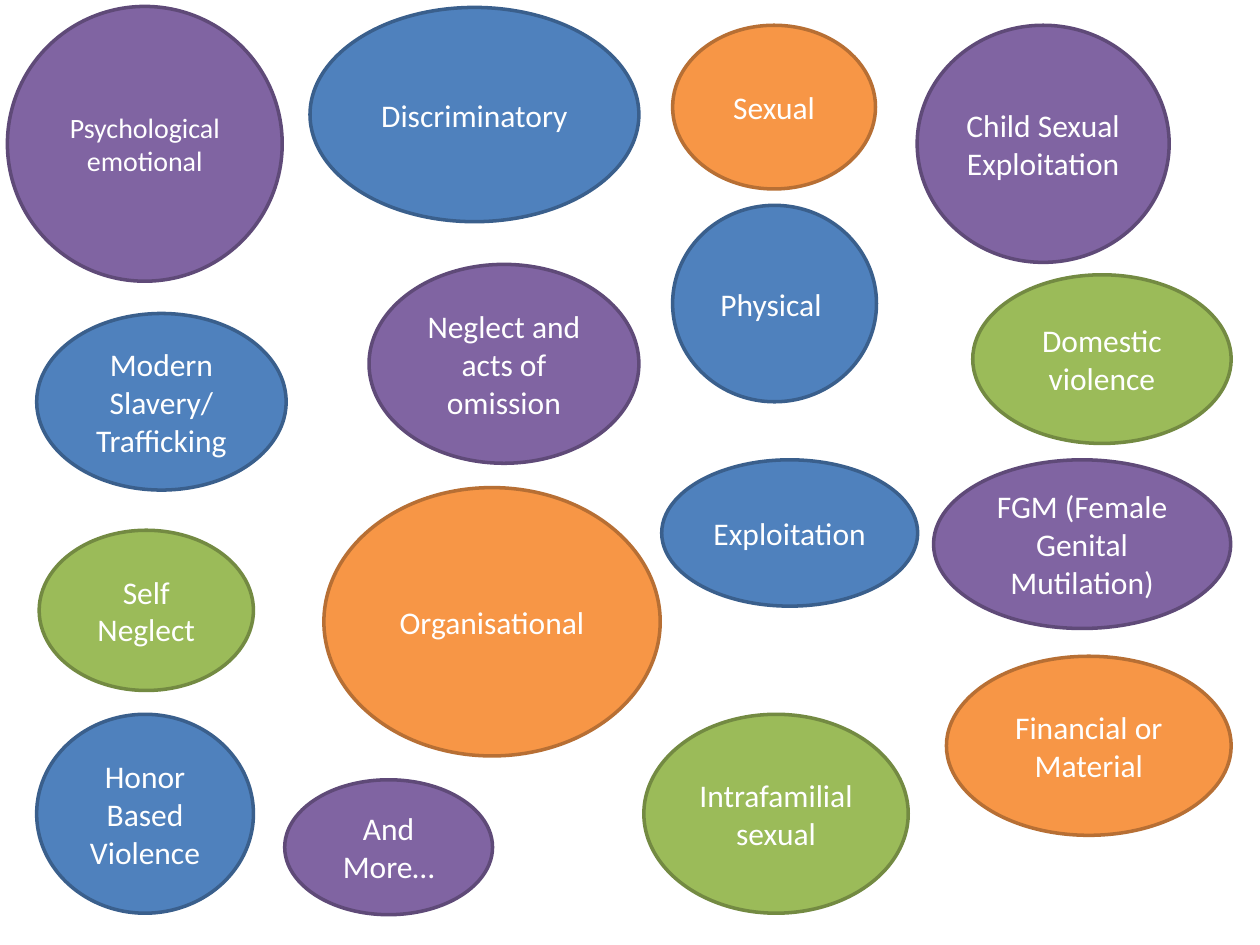
import pptx
import pptx.dml.color
import pptx.enum.shapes
import pptx.enum.text
import pptx.util

Cm = pptx.util.Cm
Pt = pptx.util.Pt
RGB = pptx.dml.color.RGBColor.from_string

THEME = {
    "font": "Calibri",
    "text": "FFFFFF",
    "size": 18,
    "small_size": 16,
    "line_width": 2,
    # name: (fill, outline)
    "purple": ("8064A2", "5F4A78"),
    "green": ("9BBB59", "738A42"),
    "orange": ("F79646", "B76F34"),
    "blue": ("4F81BD", "3A5F8C"),
}

# Label, colour, (left, top, width, height) in cm, text size; back to front
ABUSE_TYPES = [
    ("FGM (Female Genital Mutilation)", "purple", (18.82, 9.27, 5.99, 3.4), "size"),
    ("Neglect and acts of omission", "purple", (7.44, 5.33, 5.44, 4.01), "size"),
    ("Domestic violence", "green", (19.61, 5.54, 5.21, 3.4), "size"),
    ("Financial or Material", "orange", (19.08, 13.23, 5.74, 3.61), "size"),
    ("Sexual", "orange", (13.56, 0.51, 4.09, 3.3), "size"),
    ("Child Sexual \nExploitation", "purple", (18.49, 0.51, 5.08, 4.78), "size"),
    ("Exploitation", "blue", (13.34, 9.27, 5.16, 2.95), "size"),
    ("Modern Slavery/ Trafficking", "blue", (0.74, 6.32, 5.03, 3.56), "size"),
    ("Physical ", "blue", (13.56, 4.14, 4.11, 3.96), "size"),
    ("Discriminatory", "blue", (6.25, 0.15, 6.63, 4.32), "size"),
    ("Psychological\nemotional", "purple", (0.15, 0.13, 5.54, 5.54), "small_size"),
    ("Self Neglect", "green", (0.79, 10.69, 4.32, 3.23), "size"),
    ("Organisational", "orange", (6.53, 9.83, 6.78, 5.41), "size"),
    ("Honor Based Violence", "blue", (0.74, 14.4, 4.37, 4.01), "size"),
    ("Intrafamilial\nsexual", "green", (12.98, 14.4, 5.33, 4.01), "size"),
    ("And More…", "purple", (5.74, 15.72, 4.19, 2.72), "size"),
]


def add_bubble(slide, label, colour, box, size):
    shape = slide.shapes.add_shape(
        pptx.enum.shapes.MSO_SHAPE.OVAL, *(Cm(length) for length in box)
    )
    fill, outline = THEME[colour]
    shape.shadow.inherit = False
    shape.fill.solid()
    shape.fill.fore_color.rgb = RGB(fill)
    shape.line.color.rgb = RGB(outline)
    shape.line.width = Pt(THEME["line_width"])

    frame = shape.text_frame
    frame.word_wrap = True
    frame.vertical_anchor = pptx.enum.text.MSO_ANCHOR.MIDDLE
    frame.text = label
    for paragraph in frame.paragraphs:
        paragraph.alignment = pptx.enum.text.PP_ALIGN.CENTER
        paragraph.font.name = THEME["font"]
        paragraph.font.size = Pt(THEME[size])
        paragraph.font.color.rgb = RGB(THEME["text"])


def main():
    presentation = pptx.Presentation()
    presentation.slide_width = Cm(25.4)
    presentation.slide_height = Cm(19.05)
    blank_layout = presentation.slide_layouts[6]
    slide = presentation.slides.add_slide(blank_layout)
    for abuse_type in ABUSE_TYPES:
        add_bubble(slide, *abuse_type)
    presentation.save("out.pptx")


if __name__ == "__main__":
    main()
